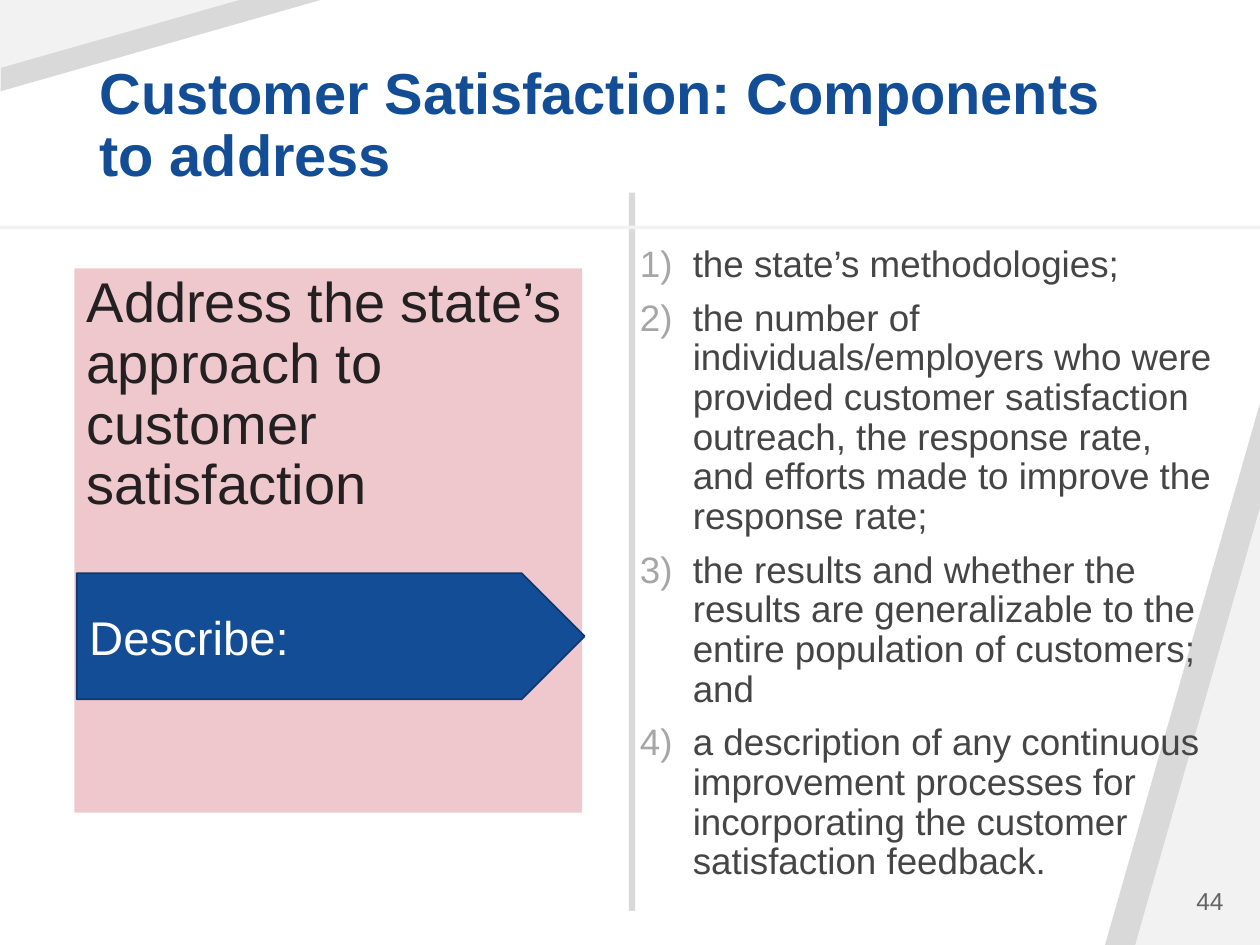
import pptx
import pptx.util
import pptx.dml.color
import pptx.enum.shapes
import pptx.enum.text
import pptx.oxml
import pptx.oxml.ns
from dataclasses import dataclass

# Content
TITLE = "Customer Satisfaction: Components to address"
APPROACH = "Address the state’s approach to customer satisfaction"
ARROW_LABEL = "Describe:"
COMPONENTS = [
    "the state’s methodologies;",
    "the number of individuals/employers who were provided customer satisfaction "
    "outreach, the response rate, and efforts made to improve the response rate;",
    "the results and whether the results are generalizable to the entire "
    "population of customers; and",
    "a description of any continuous improvement processes for incorporating "
    "the customer satisfaction feedback.",
]
PAGE_NUMBER = "44"


@dataclass(frozen=True)
class Theme:
    font: str = "Arial"
    blue: str = "124D95"
    blue_line: str = "0D396E"
    pink: str = "EFC8CD"
    grey: str = "D9D9D9"
    pale: str = "F2F2F2"
    ink: str = "242021"
    body: str = "454545"
    number: str = "A6A6A6"
    page: str = "646464"
    white: str = "FFFFFF"
    title_size: int = 33
    approach_size: int = 32
    arrow_size: int = 27
    body_size: int = 21
    page_size: int = 14


THEME = Theme()
# Decoration: box, colour, rotation, vertical flip
CORNERS = [
    ((8.77, 3.2, 1.23, 4.3), THEME.grey, 0, False),
    ((9.01, 4.03, 0.99, 3.47), THEME.pale, 0, False),
    ((0.92, -0.92, 0.73, 2.56), THEME.grey, 270, True),
    ((0.68, -0.68, 0.54, 1.9), THEME.pale, 270, True),
]
RULES = [
    ((4.99, 1.53, 0.05, 5.7), THEME.grey),
    ((0, 1.79, 10, 0.03), THEME.pale),
]
SHAPES = pptx.enum.shapes.MSO_SHAPE
ANCHOR = pptx.enum.text.MSO_ANCHOR
ALIGN = pptx.enum.text.PP_ALIGN


def color(value):
    return pptx.dml.color.RGBColor.from_string(value)


def inches(box):
    return [pptx.util.Inches(value) for value in box]


def add_filled(slide, kind, box, fill, line=None):
    shape = slide.shapes.add_shape(kind, *inches(box))
    shape.shadow.inherit = False
    shape.fill.solid()
    shape.fill.fore_color.rgb = color(fill)
    if line:
        shape.line.color.rgb = color(line)
        shape.line.width = pptx.util.Pt(1)
    else:
        shape.line.fill.background()
    return shape


def add_numbering(paragraph):
    properties = paragraph._p.get_or_add_pPr()
    properties.set("marL", str(pptx.util.Inches(0.75)))
    properties.set("indent", str(pptx.util.Inches(-0.42)))
    namespace = pptx.oxml.ns.nsdecls("a")
    for xml in (
        f'<a:buClr {namespace}><a:srgbClr val="{THEME.number}"/></a:buClr>',
        f'<a:buFont {namespace} typeface="+mj-lt"/>',
        f'<a:buAutoNum {namespace} type="arabicParenR"/>',
    ):
        properties.append(pptx.oxml.parse_xml(xml))


def write(shape, texts, size, ink, anchor=ANCHOR.TOP, align=ALIGN.LEFT,
          spacing=None, bold=False, numbered=False):
    frame = shape.text_frame
    frame.word_wrap = True
    frame.vertical_anchor = anchor
    for index, text in enumerate(texts):
        paragraph = frame.add_paragraph() if index else frame.paragraphs[0]
        paragraph.alignment = align
        if spacing:
            paragraph.line_spacing = spacing
        if index:
            paragraph.space_before = pptx.util.Pt(8)
        if numbered:
            add_numbering(paragraph)
        run = paragraph.add_run()
        run.text = text
        run.font.name = THEME.font
        run.font.size = pptx.util.Pt(size)
        run.font.bold = bold
        run.font.color.rgb = color(ink)


def add_text(slide, box, *arguments, **options):
    write(slide.shapes.add_textbox(*inches(box)), *arguments, **options)


def main():
    presentation = pptx.Presentation()
    presentation.slide_width, presentation.slide_height = inches((10, 7.5))
    slide = presentation.slides.add_slide(presentation.slide_layouts[6])

    # Corner triangles and dividing rules
    for box, fill, rotation, flipped in CORNERS:
        triangle = add_filled(slide, SHAPES.ISOSCELES_TRIANGLE, box, fill)
        triangle.adjustments[0] = 1
        triangle.rotation = rotation
        if flipped:
            triangle._element.spPr.xfrm.set("flipV", "1")
    for box, fill in RULES:
        add_filled(slide, SHAPES.RECTANGLE, box, fill)

    # Title
    add_text(slide, (0.69, 0.4, 8.7, 1.15), [TITLE], THEME.title_size,
             THEME.blue, anchor=ANCHOR.BOTTOM, spacing=0.9, bold=True)

    # Approach panel
    panel = add_filled(slide, SHAPES.RECTANGLE, (0.59, 2.13, 4.03, 4.32), THEME.pink)
    write(panel, [APPROACH], THEME.approach_size, THEME.ink, spacing=0.9)

    # Numbered components
    add_text(slide, (4.65, 1.9, 5.11, 5.19), COMPONENTS, THEME.body_size,
             THEME.body, spacing=0.9, numbered=True)

    # Page number
    add_text(slide, (8.41, 6.95, 1.4, 0.4), [PAGE_NUMBER], THEME.page_size,
             THEME.page, anchor=ANCHOR.MIDDLE, align=ALIGN.RIGHT)

    # Arrow pointing to the components
    arrow = add_filled(slide, SHAPES.PENTAGON, (0.61, 4.55, 4.03, 1),
                       THEME.blue, THEME.blue_line)
    write(arrow, [ARROW_LABEL], THEME.arrow_size, THEME.white, anchor=ANCHOR.MIDDLE)

    presentation.save("out.pptx")


if __name__ == "__main__":
    main()
